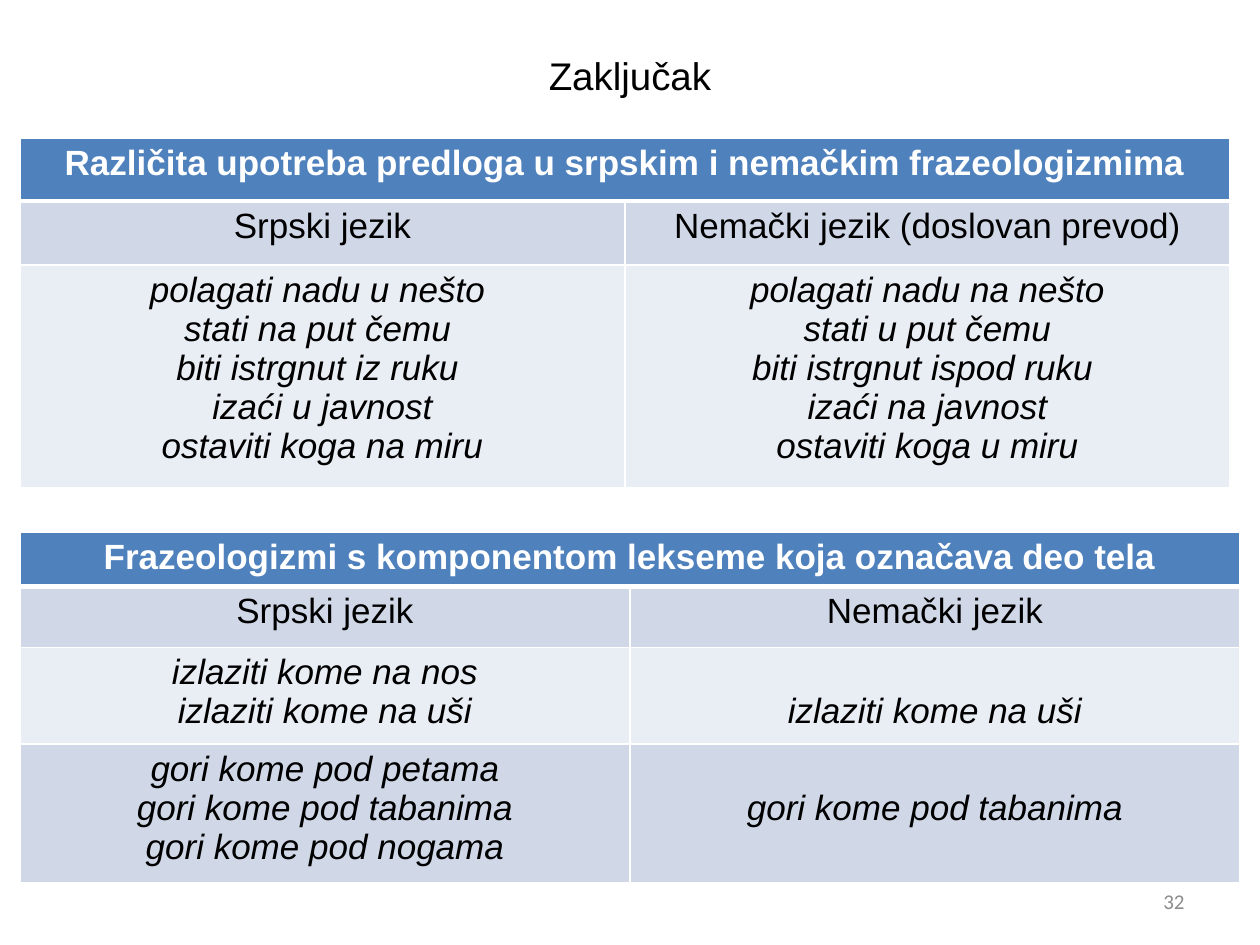
"""Build the conclusion slide with two tables comparing Serbian and German idioms."""
from lxml import etree
from pptx import Presentation
from pptx import util as u
from pptx.dml.color import RGBColor
from pptx.enum import text
from pptx.oxml.ns import qn

COLORS = {"header": "4F81BD", "dark": "D0D8E8", "light": "E9EDF4",
          "white": "FFFFFF", "black": "000000", "gray": "8C8C8C"}
WIDTH, HEIGHT = 1260, 945
PAD, LINE = 6, 39
TITLE = "Zaključak"
NUMBER = "32"
TABLES = [
    {"box": (20, 532, 1220), "heights": (54, 61, 97, 138),
     "header": "Frazeologizmi s komponentom lekseme koja označava deo tela",
     "columns": ("Srpski jezik", "Nemački jezik"),
     "idioms": [
         (["izlaziti kome na nos", "izlaziti kome na uši"],
          ["izlaziti kome na uši"]),
         (["gori kome pod petama", "gori kome pod tabanima", "gori kome pod nogama"],
          ["gori kome pod tabanima"])]},
    {"box": (20, 138, 1210), "heights": (63, 64, 222),
     "header": "Različita upotreba predloga u srpskim i nemačkim frazeologizmima",
     "columns": ("Srpski jezik", "Nemački jezik (doslovan prevod)"),
     "idioms": [
         (["polagati nadu u nešto ", "stati na put čemu ", "biti istrgnut iz ruku ",
           "izaći u javnost", "ostaviti koga na miru"],
          ["polagati nadu na nešto", "stati u put čemu", "biti istrgnut ispod ruku ",
           "izaći na javnost", "ostaviti koga u miru"])]},
]


def px(n):
    return u.Emu(round(n * 914400 / 126))


def write(tf, lines, color, align="CENTER", **font):
    for i, line in enumerate(lines):
        p = tf.paragraphs[0] if i == 0 else tf.add_paragraph()
        p.alignment = text.PP_ALIGN[align]
        r = p.add_run()
        r.text = line
        r.font.color.rgb = RGBColor.from_string(COLORS[color])
        for name, value in ({"name": "Arial", "size": u.Pt(20)} | font).items():
            setattr(r.font, name, value)


def add_text(s, box, line, color, anchor, top=PAD, **font):
    tf = s.shapes.add_textbox(*map(px, box)).text_frame
    tf.word_wrap = True
    tf.margin_top = px(top)
    tf.vertical_anchor = text.MSO_ANCHOR[anchor]
    write(tf, [line], color, **font)


def set_borders(cell, bottom):
    tcPr = cell._tc.get_or_add_tcPr()
    for i, side in enumerate(("lnL", "lnR", "lnT", "lnB")):
        width = u.Pt(bottom if side == "lnB" else 1)
        ln = etree.Element(qn("a:" + side), w=str(width))
        fill = etree.SubElement(ln, qn("a:solidFill"))
        etree.SubElement(fill, qn("a:srgbClr"), val=COLORS["white"])
        tcPr.insert(i, ln)


def fill_cell(cell, lines, fill, color="black", skip=0, bottom=1, **font):
    cell.margin_top = px(PAD + skip * LINE)
    cell.fill.solid()
    cell.fill.fore_color.rgb = RGBColor.from_string(COLORS[fill])
    set_borders(cell, bottom)
    write(cell.text_frame, lines, color, **font)


def add_table(s, data):
    x, y, width = data["box"]
    heights = data["heights"]
    table = s.shapes.add_table(len(heights), 2, *map(px, (x, y, width, sum(heights)))).table
    table.first_row = table.horz_banding = False
    for row, height in zip(table.rows, heights):
        row.height = px(height)
    table.cell(0, 0).merge(table.cell(0, 1))
    fill_cell(table.cell(0, 0), [data["header"]], "header", "white", bottom=3, bold=True)
    set_borders(table.cell(0, 1), 3)
    for c, name in enumerate(data["columns"]):
        fill_cell(table.cell(1, c), [name], "dark")
    for r, pair in enumerate(data["idioms"], 2):
        for c, lines in enumerate(pair):
            skip = 1 if len(lines) < len(pair[0]) else 0
            fill_cell(table.cell(r, c), lines, "dark" if r % 2 else "light",
                      skip=skip, italic=True)


def main():
    prs = Presentation()
    prs.slide_width, prs.slide_height = px(WIDTH), px(HEIGHT)
    s = prs.slides.add_slide(prs.slide_layouts[6])
    add_text(s, (903, 876, 294, 50), NUMBER, "gray", "MIDDLE",
             align="RIGHT", name="Calibri", size=u.Pt(12))
    add_text(s, (0, 0, WIDTH, 606), TITLE, "black", "TOP", top=52, size=u.Pt(22))
    for data in TABLES:
        add_table(s, data)
    prs.save("out.pptx")


if __name__ == "__main__":
    main()
